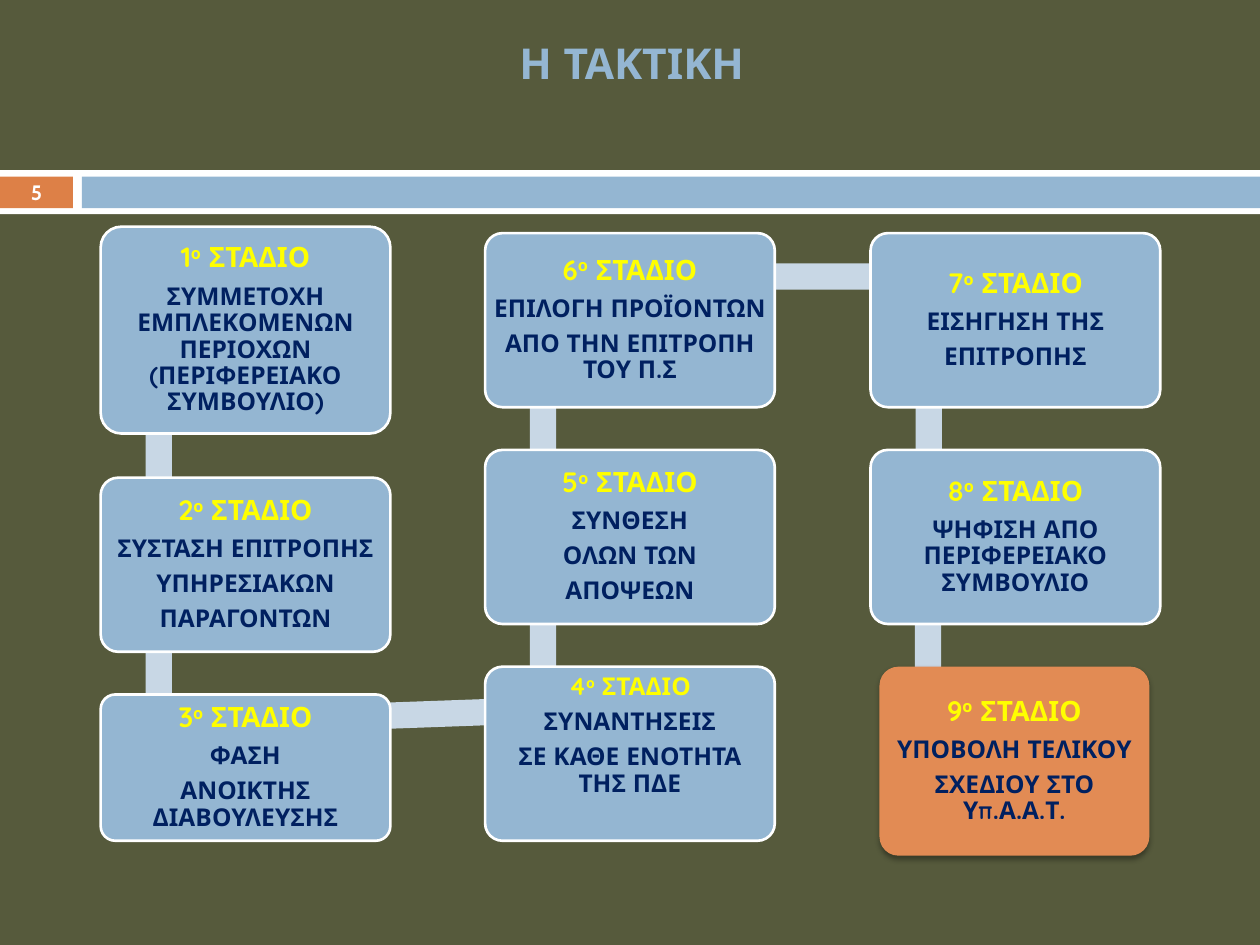
from dataclasses import dataclass
from itertools import pairwise
from math import atan2, degrees, hypot

from lxml import etree
from pptx import Presentation
from pptx.dml.color import RGBColor
from pptx.enum.shapes import MSO_SHAPE
from pptx.enum.text import MSO_ANCHOR, MSO_AUTO_SIZE, PP_ALIGN
from pptx.oxml.ns import qn
from pptx.util import Cm, Pt

RECT, ROUNDED = MSO_SHAPE.RECTANGLE, MSO_SHAPE.ROUNDED_RECTANGLE
TOP, MIDDLE = MSO_ANCHOR.TOP, MSO_ANCHOR.MIDDLE
CENTER = PP_ALIGN.CENTER

OLIVE, WHITE, BLUE, PALE = "565A3C", "FFFFFF", "94B6D2", "C8D7E5"
ORANGE, LIGHT_ORANGE = "DD8047", "E28B54"
YELLOW, NAVY = "FFFF00", "002060"
FONT = "Quicksand"

COL = [2.03, 9.78, 17.55]
ROW = [4.7 + 4.37 * i for i in range(3)]
LINK_WIDTH = 0.53
LINK_DX, LINK_DY = -1.75, -0.88


@dataclass
class Stage:
    x: float
    y: float
    lines: list[str]
    w: float = 5.84
    h: float = 3.51
    head_size: int = 16
    anchor: MSO_ANCHOR = MIDDLE
    final: bool = False

    @property
    def center(self) -> tuple[float, float]:
        return self.x + self.w / 2, self.y + self.h / 2


STAGES = [
    Stage(COL[0], 4.57, ["ΣΥΜΜΕΤΟΧΗ ΕΜΠΛΕΚΟΜΕΝΩΝ ΠΕΡΙΟΧΩΝ (ΠΕΡΙΦΕΡΕΙΑΚΟ ΣΥΜΒΟΥΛΙΟ)"], h=4.17),
    Stage(COL[0], 9.63, ["ΣΥΣΤΑΣΗ ΕΠΙΤΡΟΠΗΣ", "ΥΠΗΡΕΣΙΑΚΩΝ", "ΠΑΡΑΓΟΝΤΩΝ"]),
    Stage(COL[0], 14, ["ΦΑΣΗ", "ΑΝΟΙΚΤΗΣ ΔΙΑΒΟΥΛΕΥΣΗΣ"], h=2.95),
    Stage(COL[1], ROW[2], ["ΣΥΝΑΝΤΗΣΕΙΣ", "ΣΕ ΚΑΘΕ ΕΝΟΤΗΤΑ ΤΗΣ ΠΔΕ"], head_size=14, anchor=TOP),
    Stage(COL[1], ROW[1], ["ΣΥΝΘΕΣΗ", "ΟΛΩΝ ΤΩΝ", "ΑΠΟΨΕΩΝ"]),
    Stage(COL[1], ROW[0], ["ΕΠΙΛΟΓΗ ΠΡΟΪΟΝΤΩΝ", "ΑΠΟ ΤΗΝ ΕΠΙΤΡΟΠΗ ΤΟΥ Π.Σ"]),
    Stage(COL[2], ROW[0], ["ΕΙΣΗΓΗΣΗ ΤΗΣ", "ΕΠΙΤΡΟΠΗΣ"]),
    Stage(COL[2], ROW[1], ["ΨΗΦΙΣΗ ΑΠΟ ΠΕΡΙΦΕΡΕΙΑΚΟ ΣΥΜΒΟΥΛΙΟ"]),
    Stage(17.73, ROW[2], ["ΥΠΟΒΟΛΗ ΤΕΛΙΚΟΥ", "ΣΧΕΔΙΟΥ ΣΤΟ Υπ.Α.Α.Τ."], w=5.44, h=3.81, final=True),
]


def rgb(color: str) -> RGBColor:
    return RGBColor.from_string(color)


def add_block(s, kind, x: float, y: float, w: float, h: float, color: str):
    """Add a filled shape without line or shadow."""
    sp = s.shapes.add_shape(kind, Cm(x), Cm(y), Cm(w), Cm(h))
    sp.shadow.inherit = False
    sp.fill.solid()
    sp.fill.fore_color.rgb = rgb(color)
    sp.line.fill.background()
    return sp


def format_paragraph(p, size: float, color: str, font: str = FONT) -> None:
    p.alignment = CENTER
    p.font.size = Pt(size)
    p.font.bold = True
    p.font.name = font
    p.font.color.rgb = rgb(color)


def set_margins(tf, margin: float) -> None:
    tf.margin_left = tf.margin_right = tf.margin_top = tf.margin_bottom = Cm(margin)


def add_drop_shadow(sp) -> None:
    effects = sp._element.spPr.find(qn("a:effectLst"))
    shadow = etree.SubElement(effects, qn("a:outerShdw"), blurRad=str(Pt(3)),
                              dist=str(Pt(2)), dir="5400000", rotWithShape="0")
    color = etree.SubElement(shadow, qn("a:srgbClr"), val="000000")
    etree.SubElement(color, qn("a:alpha"), val="35000")


def add_link(s, start: Stage, end: Stage) -> None:
    """Add a bar parallel to the line between two stage centres."""
    (x1, y1), (x2, y2) = start.center, end.center
    length = hypot(x2 - x1, y2 - y1)
    cx, cy = (x1 + x2) / 2 + LINK_DX, (y1 + y2) / 2 + LINK_DY
    sp = add_block(s, RECT, cx - length / 2, cy - LINK_WIDTH / 2, length, LINK_WIDTH, PALE)
    sp.rotation = degrees(atan2(y2 - y1, x2 - x1))


def add_stage(s, number: int, stage: Stage) -> None:
    sp = add_block(s, ROUNDED, stage.x, stage.y, stage.w, stage.h,
                   LIGHT_ORANGE if stage.final else BLUE)
    sp.adjustments[0] = 0.1
    if stage.final:
        add_drop_shadow(sp)
    else:
        sp.line.color.rgb = rgb(WHITE)
        sp.line.width = Pt(1.5)
    tf = sp.text_frame
    tf.word_wrap = True
    tf.vertical_anchor = stage.anchor
    set_margins(tf, 0.05)

    head = tf.paragraphs[0]
    for text in (str(number), "ο", " ΣΤΑΔΙΟ"):
        r = head.add_run()
        r.text = text
        if text == "ο":
            r._r.get_or_add_rPr().set("baseline", "30000")
    format_paragraph(head, stage.head_size, YELLOW)
    for line in stage.lines:
        p = tf.add_paragraph()
        p.text = line
        format_paragraph(p, 14, NAVY)
    for p in tf.paragraphs:
        p.line_spacing = 0.9
        p.space_after = Pt(0.35 * p.font.size.pt)


def add_title(s, text: str) -> None:
    title = s.shapes.title
    title.left, title.top, title.width, title.height = Cm(0.71), Cm(0.61), Cm(24.05), Cm(2.08)
    tf = title.text_frame
    tf.text = text
    tf.auto_size = MSO_AUTO_SIZE.NONE
    tf.vertical_anchor = TOP
    format_paragraph(tf.paragraphs[0], 24.3, BLUE)


def add_banner(s, page: str) -> None:
    add_block(s, RECT, 0, 3.43, 25.4, 0.89, WHITE)
    add_block(s, RECT, 1.65, 3.56, 23.75, 0.64, BLUE)
    tf = add_block(s, RECT, 0, 3.56, 1.47, 0.64, ORANGE).text_frame
    set_margins(tf, 0)
    tf.vertical_anchor = MIDDLE
    tf.text = page
    format_paragraph(tf.paragraphs[0], 11.9, WHITE, "Cabin")


def main() -> None:
    prs = Presentation()
    prs.slide_width, prs.slide_height = Cm(25.4), Cm(19.05)
    s = prs.slides.add_slide(prs.slide_layouts[5])
    s.background.fill.solid()
    s.background.fill.fore_color.rgb = rgb(OLIVE)
    add_title(s, "Η ΤΑΚΤΙΚΗ")
    add_banner(s, "5")
    for start, end in pairwise(STAGES):
        add_link(s, start, end)
    for number, stage in enumerate(STAGES, 1):
        add_stage(s, number, stage)
    prs.save("out.pptx")


if __name__ == "__main__":
    main()
